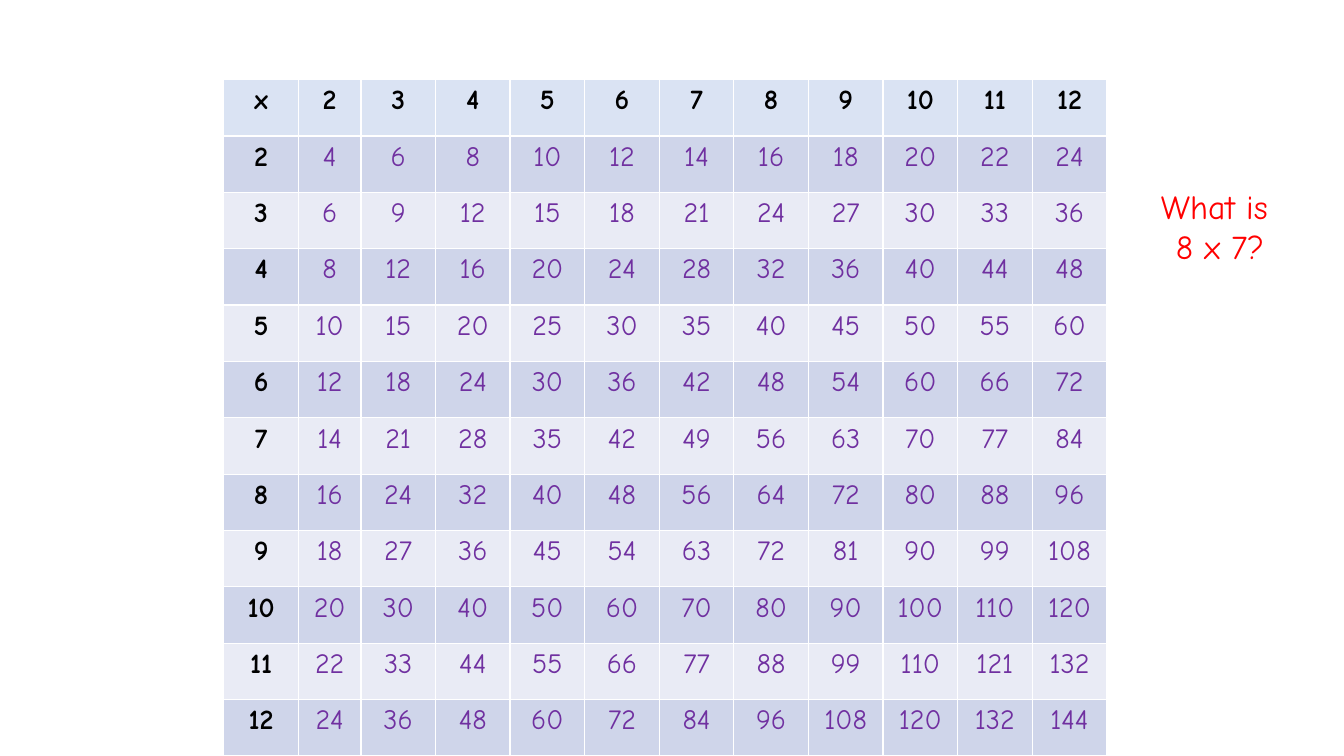
from pptx import Presentation
from pptx.dml.color import RGBColor
from pptx.enum import text
from pptx.util import Inches, Pt

FACTORS = list(range(2, 13))
QUESTION = ["What is ", "8 x 7?"]

FONT = "Comic Neue"
BLACK = RGBColor(0x00, 0x00, 0x00)
PURPLE = RGBColor(0x70, 0x30, 0xA0)
RED = RGBColor(0xFF, 0x00, 0x00)
HEAD = RGBColor(0xDA, 0xE3, 0xF3)
BANDS = [RGBColor(0xE9, 0xEB, 0xF5), RGBColor(0xCF, 0xD5, 0xEA)]

WIDE, HIGH = 13.33, 7.5
LEFT, TOP = 2.22, 0.79
COL, SLIM = 0.74, 0.62  # the column for 2 is slimmer than the rest

LABEL = {"size": Pt(20), "bold": True, "name": FONT}
PRODUCT = {"size": Pt(20), "bold": False, "name": FONT}
ASK = {"size": Pt(24), "name": FONT}


def write(para, words, style, color):
    para.alignment = text.PP_ALIGN.CENTER
    run = para.add_run()
    run.text = words
    for key, value in style.items():
        setattr(run.font, key, value)
    run.font.color.rgb = color


def add_grid(slide):
    """Add the times table; its default style draws the white rules."""
    rows = [["x"] + FACTORS]
    rows += [[a] + [a * b for b in FACTORS] for a in FACTORS]
    count = len(rows)
    widths = [SLIM if c == 1 else COL for c in range(count)]
    table = slide.shapes.add_table(
        count, count, Inches(LEFT), Inches(TOP),
        Inches(sum(widths)), Inches(HIGH - TOP)).table
    for col, width in zip(table.columns, widths):
        col.width = Inches(width)
    for r, row in enumerate(rows):
        for c, value in enumerate(row):
            cell = table.cell(r, c)
            cell.fill.solid()
            cell.fill.fore_color.rgb = BANDS[r % 2] if r else HEAD
            edge = r == 0 or c == 0
            write(cell.text_frame.paragraphs[0], str(value),
                  LABEL if edge else PRODUCT, BLACK if edge else PURPLE)


def add_question(slide):
    box = slide.shapes.add_textbox(
        Inches(11.11), Inches(1.79), Inches(1.98), Inches(0.91))
    frame = box.text_frame
    frame.word_wrap = True
    frame.auto_size = text.MSO_AUTO_SIZE.SHAPE_TO_FIT_TEXT
    for i, line in enumerate(QUESTION):
        para = frame.add_paragraph() if i else frame.paragraphs[0]
        write(para, line, ASK, RED)


def main():
    deck = Presentation()
    deck.slide_width, deck.slide_height = Inches(WIDE), Inches(HIGH)
    slide = deck.slides.add_slide(deck.slide_layouts[6])
    add_grid(slide)
    add_question(slide)
    deck.save("out.pptx")


if __name__ == "__main__":
    main()
